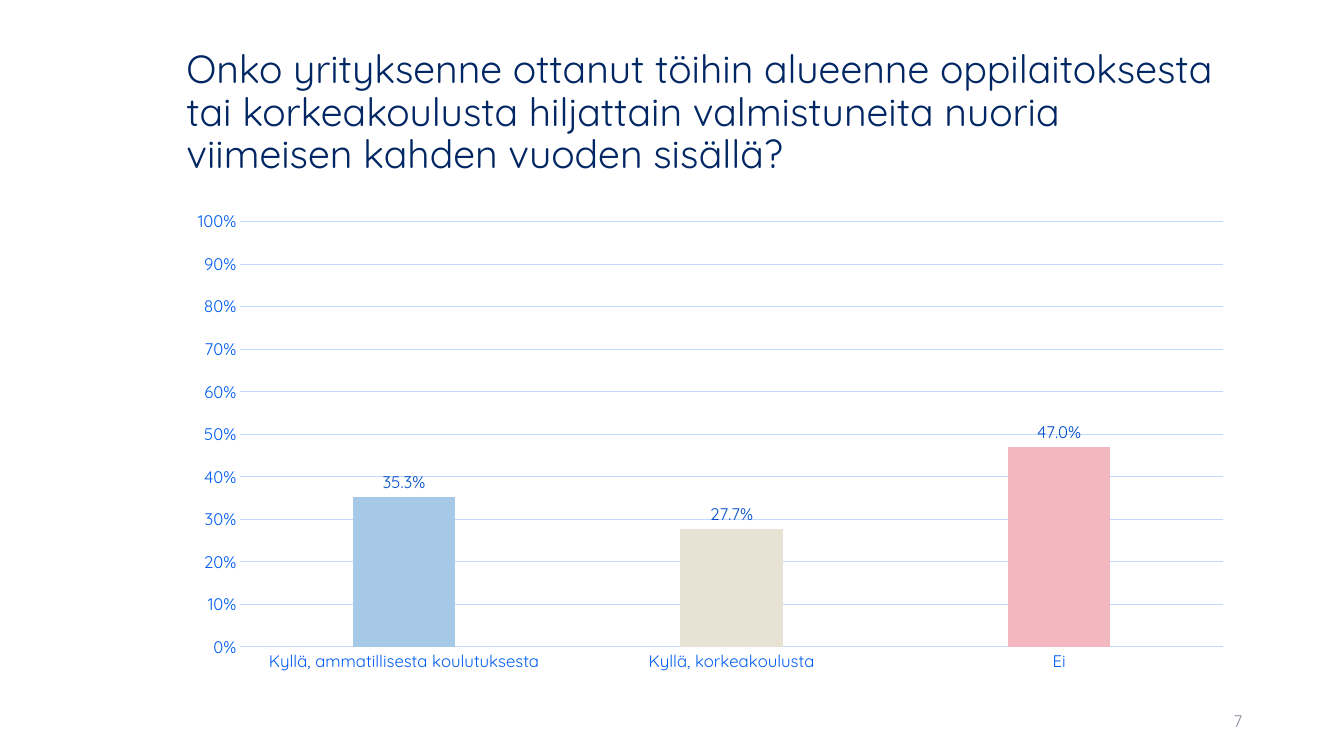
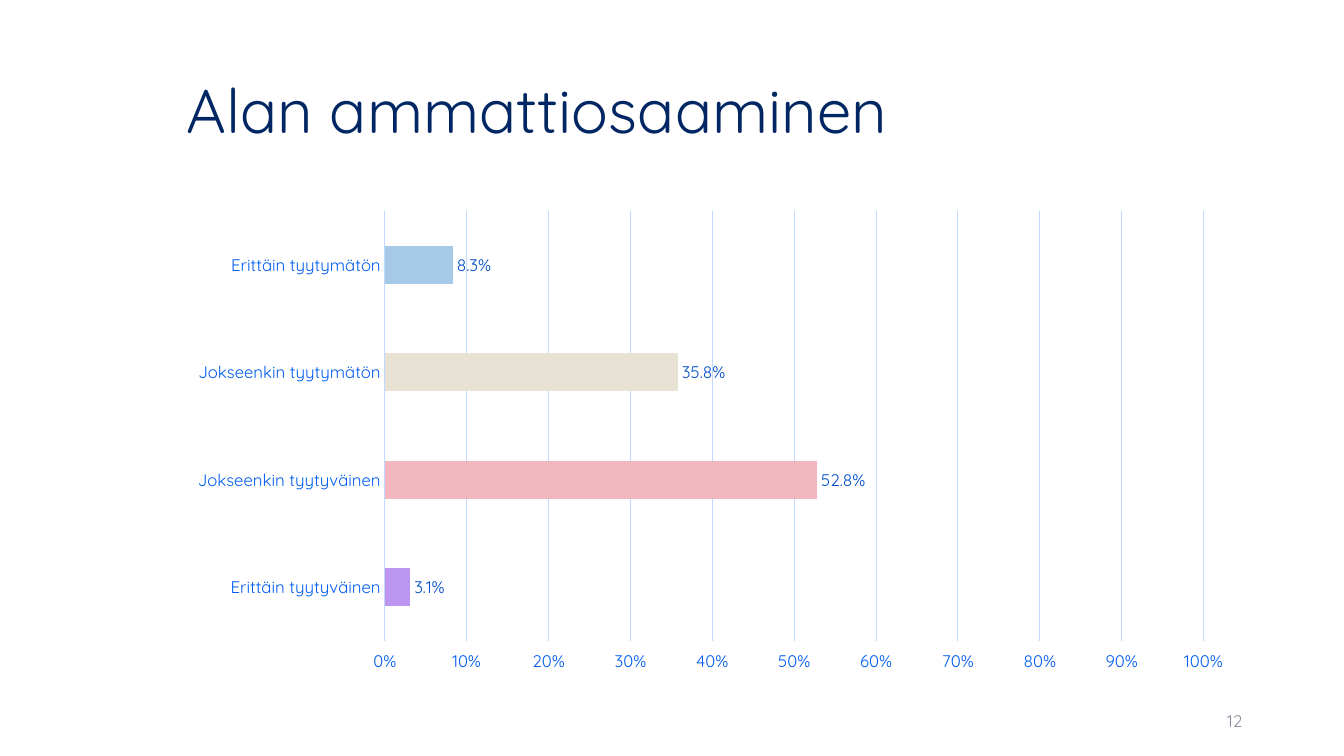
from dataclasses import dataclass

from pptx import Presentation
from pptx import util as u
from pptx.chart.data import CategoryChartData
from pptx.dml.color import RGBColor
from pptx.enum import chart as ch, text


@dataclass(frozen=True)
class Theme:
    font: str = "Quicksand"
    title: str = "002663"
    number: str = "8C8E9F"
    axis: str = "005DF3"
    label: str = "004DCA"
    grid: str = "C1D9FF"
    bars: tuple = ("A5C9E7", "E8E2D5", "F2B7BF", "BB95EF")
    small: int = 12


T = Theme()


def style(font, size, color):
    font.name = T.font
    font.size = u.Pt(size)
    font.bold = False
    font.color.rgb = RGBColor.from_string(color)


def add_text(s, box, words, size, color, align):
    tf = s.shapes.add_textbox(*map(u.Inches, box)).text_frame
    tf.word_wrap = True
    tf.vertical_anchor = text.MSO_ANCHOR.MIDDLE
    tf.text = words
    p = tf.paragraphs[0]
    p.alignment = align
    style(p.runs[0].font, size, color)
    return p


slides = [
    dict(
        title="Onko yrityksenne ottanut töihin alueenne oppilaitoksesta tai "
              "korkeakoulusta hiljattain valmistuneita nuoria viimeisen kahden "
              "vuoden sisällä?",
        size=28, number="7", kind=ch.XL_CHART_TYPE.COLUMN_CLUSTERED,
        gap=219, overlap=-27,
        values={
            "Kyllä, ammatillisesta koulutuksesta": 0.353,
            "Kyllä, korkeakoulusta": 0.277,
            "Ei": 0.47,
        },
    ),
    dict(
        title="Alan ammattiosaaminen",
        size=44, number="12", kind=ch.XL_CHART_TYPE.BAR_CLUSTERED,
        gap=182, overlap=0,
        values={
            "Erittäin tyytymätön": 0.083,
            "Jokseenkin tyytymätön": 0.358,
            "Jokseenkin tyytyväinen": 0.528,
            "Erittäin tyytyväinen": 0.031,
        },
    ),
]

prs = Presentation()
prs.slide_width, prs.slide_height = u.Inches(13.33), u.Inches(7.5)

for d in slides:
    s = prs.slides.add_slide(prs.slide_layouts[6])
    p = add_text(s, (1.75, 0.4, 10.59, 1.45), d["title"], d["size"], T.title,
                 text.PP_ALIGN.LEFT)
    p.line_spacing = 0.9
    add_text(s, (9.42, 6.95, 3, 0.4), d["number"], T.small, T.number,
             text.PP_ALIGN.RIGHT)

    data = CategoryChartData()
    data.categories = list(d["values"])
    data.add_series("Series 1", list(d["values"].values()))
    box = map(u.Inches, (1.75, 2, 10.59, 4.76))
    chart = s.shapes.add_chart(d["kind"], *box, data).chart
    chart.has_title = False
    chart.has_legend = False
    style(chart.font, 10, T.title)

    cat, val = chart.category_axis, chart.value_axis
    for axis in (cat, val):
        axis.major_tick_mark = axis.minor_tick_mark = ch.XL_TICK_MARK.NONE
        style(axis.tick_labels.font, T.small, T.axis)
    val.minimum_scale, val.maximum_scale, val.major_unit = 0, 1, 0.1
    val.tick_labels.number_format = "0%"
    val.tick_labels.number_format_is_linked = False
    val.format.line.fill.background()
    val.has_major_gridlines = True
    for line in (cat.format.line, val.major_gridlines.format.line):
        line.width = u.Pt(0.75)
        line.color.rgb = RGBColor.from_string(T.grid)
    if d["kind"] == ch.XL_CHART_TYPE.BAR_CLUSTERED:
        cat.reverse_order = True
        val.tick_label_position = ch.XL_TICK_LABEL_POSITION.HIGH

    plot = chart.plots[0]
    plot.vary_by_categories = False
    plot.gap_width, plot.overlap = d["gap"], d["overlap"]
    plot.has_data_labels = True
    labels = plot.data_labels
    labels.show_value = True
    labels.number_format = "0.0%"
    labels.number_format_is_linked = False
    labels.position = ch.XL_LABEL_POSITION.OUTSIDE_END
    style(labels.font, T.small, T.label)
    for i, color in enumerate(T.bars[:len(d["values"])]):
        fill = plot.series[0].points[i].format.fill
        fill.solid()
        fill.fore_color.rgb = RGBColor.from_string(color)

prs.save("out.pptx")
